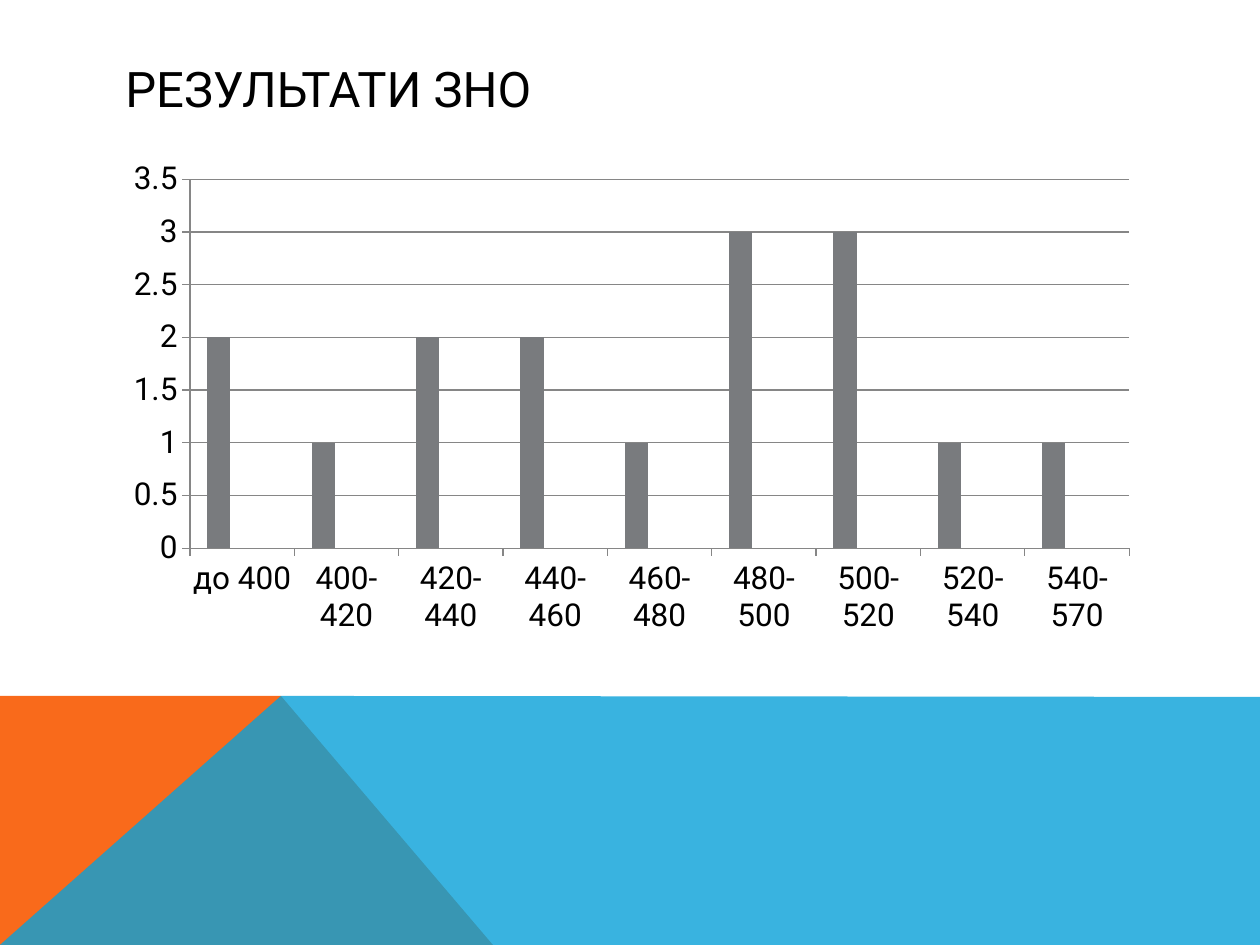
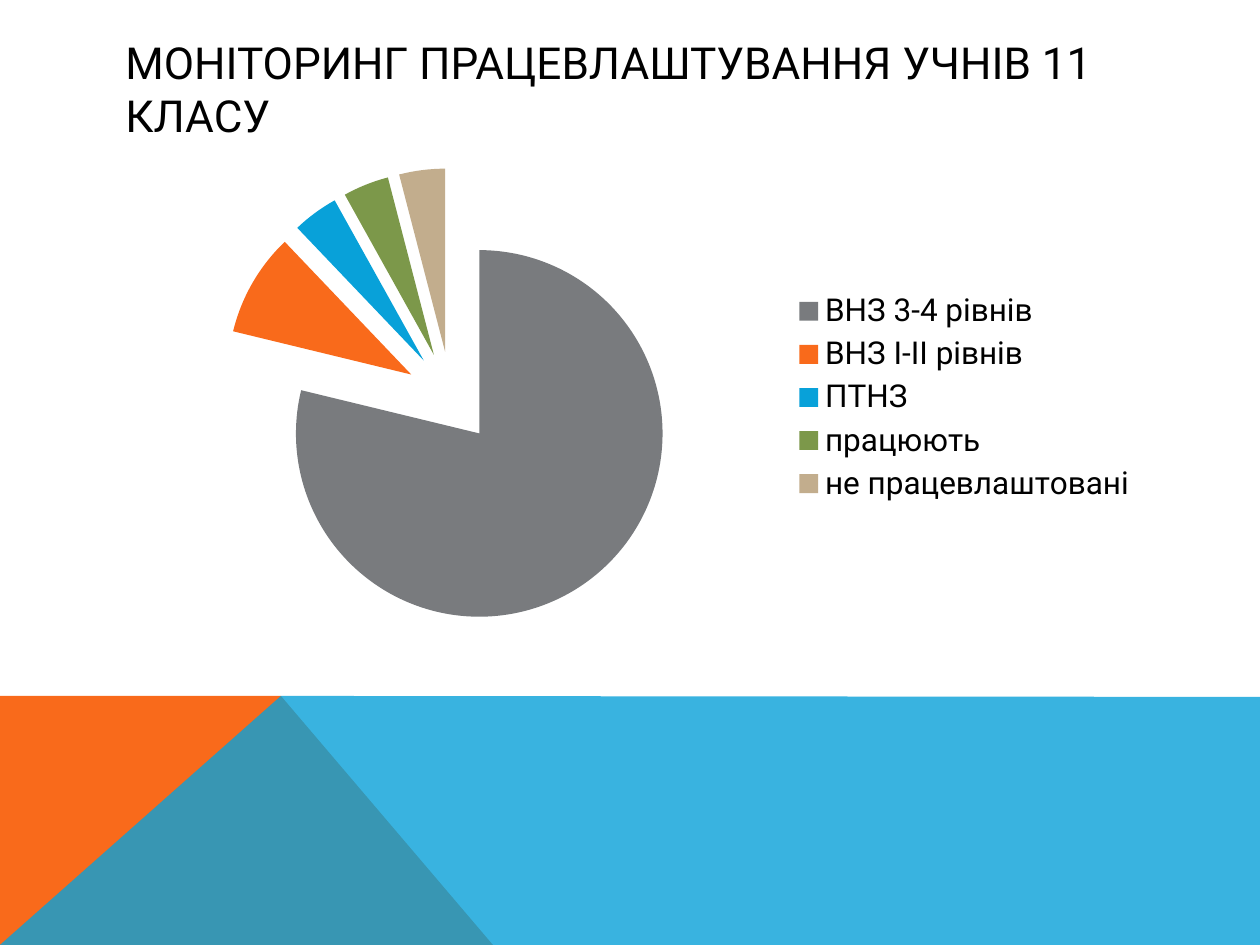
from lxml.etree import SubElement
from pptx import Presentation
from pptx.chart.data import CategoryChartData
from pptx.dml.color import RGBColor
from pptx.enum.chart import XL_CHART_TYPE, XL_LEGEND_POSITION, XL_TICK_MARK
from pptx.enum.text import MSO_ANCHOR
from pptx.oxml import parse_xml
from pptx.oxml.ns import nsdecls, qn
from pptx.util import Emu, Pt

EMU_PER_PX = 914400 / 126
SLIDE_W, SLIDE_H = 1260, 945
TITLE_BOX = (113, 50, 1036, 76)
CHART_BOX = (113, 151, 1037, 493)
BAND_TOP, PEAK_X, ORANGE_END = 696, 281, 493

FONT = "Roboto"
BLACK = RGBColor(0x00, 0x00, 0x00)
GRAY = RGBColor(0x79, 0x7B, 0x7E)
ORANGE = RGBColor(0xF9, 0x6A, 0x1B)
BLUE = RGBColor(0x08, 0xA1, 0xD9)
GREEN = RGBColor(0x7C, 0x98, 0x4A)
SAND = RGBColor(0xC2, 0xAD, 0x8D)
AXIS_GRAY = RGBColor(0x86, 0x86, 0x86)
ACCENTS = [GRAY, ORANGE, BLUE, GREEN, SAND]

SCORES_TITLE = ("РЕЗУЛЬТАТИ ЗНО", 28)
SCORES = [
    ("до 400 ", 2), ("400-420", 1), ("420-440", 2),
    ("440-460", 2), ("460-480", 1), ("480-500", 3),
    ("500-520", 3), ("520-540", 1), ("540-570", 1),
]
EMPTY_SERIES = ["Series 2", "Series 3"]

PLACEMENT_TITLE = ("МОНІТОРИНГ ПРАЦЕВЛАШТУВАННЯ УЧНІВ 11 КЛАСУ", 25.2)
PLACEMENT = [
    ("ВНЗ 3-4 рівнів", 78),
    ("ВНЗ І-ІІ рівнів", 9),
    ("ПТНЗ", 4),
    ("працюють", 4),
    ("не працевлаштовані", 4),
]
EXPLOSION = 25

BANDS = [
    ([(0, SLIDE_H), (0, BAND_TOP), (PEAK_X, BAND_TOP), (ORANGE_END, SLIDE_H)], ORANGE, 100),
    ([(0, SLIDE_H), (PEAK_X, BAND_TOP), (SLIDE_W, BAND_TOP + 1), (SLIDE_W, SLIDE_H)], BLUE, 80),
]


def px(length):
    return Emu(round(length * EMU_PER_PX))


def add_band(slide, corners, color, opacity):
    builder = slide.shapes.build_freeform(*corners[0], scale=EMU_PER_PX)
    builder.add_line_segments(corners[1:], close=True)
    band = builder.convert_to_shape()
    band.shadow.inherit = False
    band.line.fill.background()
    band.fill.solid()
    band.fill.fore_color.rgb = color
    if opacity < 100:
        tint = band.fill._xPr.find(".//" + qn("a:srgbClr"))
        SubElement(tint, qn("a:alpha"), val=str(opacity * 1000))


def add_titled_slide(deck, title, size):
    slide = deck.slides.add_slide(deck.slide_layouts[6])
    for band in BANDS:
        add_band(slide, *band)
    frame = slide.shapes.add_textbox(*map(px, TITLE_BOX)).text_frame
    frame.word_wrap = True
    frame.vertical_anchor = MSO_ANCHOR.MIDDLE
    run = frame.paragraphs[0].add_run()
    run.text = title
    run.font.size = Pt(size)
    run.font.name = FONT
    run.font.color.rgb = BLACK
    return slide


def add_chart(slide, kind, rows, empty_series=()):
    labels, values = zip(*rows)
    chart_data = CategoryChartData()
    chart_data.categories = labels
    chart_data.add_series("Series 1", values)
    for name in empty_series:
        chart_data.add_series(name, [None] * len(labels))
    chart = slide.shapes.add_chart(kind, *map(px, CHART_BOX), chart_data).chart
    chart.has_title = False
    chart.has_legend = False
    chart.font.size = Pt(18)
    chart.font.name = FONT
    chart.font.color.rgb = BLACK
    return chart


def style_line(line):
    line.color.rgb = AXIS_GRAY
    line.width = Pt(0.75)


def add_scores(deck):
    slide = add_titled_slide(deck, *SCORES_TITLE)
    chart = add_chart(slide, XL_CHART_TYPE.COLUMN_CLUSTERED, SCORES, EMPTY_SERIES)
    plot = chart.plots[0]
    plot.gap_width = 150
    plot.vary_by_categories = False
    for series, color in zip(plot.series, ACCENTS):
        series.format.fill.solid()
        series.format.fill.fore_color.rgb = color
    for axis in (chart.category_axis, chart.value_axis):
        axis.major_tick_mark = XL_TICK_MARK.OUTSIDE
        axis.minor_tick_mark = XL_TICK_MARK.NONE
        style_line(axis.format.line)
    chart.value_axis.has_major_gridlines = True
    style_line(chart.value_axis.major_gridlines.format.line)


def add_placement(deck):
    slide = add_titled_slide(deck, *PLACEMENT_TITLE)
    chart = add_chart(slide, XL_CHART_TYPE.PIE, PLACEMENT)
    chart.has_legend = True
    chart.legend.position = XL_LEGEND_POSITION.RIGHT
    chart.legend.include_in_layout = False
    plot = chart.plots[0]
    plot.vary_by_categories = True
    series = plot.series[0]
    for index, color in enumerate(ACCENTS):
        fill = series.points[index].format.fill
        fill.solid()
        fill.fore_color.rgb = color
    explosion = parse_xml(f'<c:explosion {nsdecls("c")} val="{EXPLOSION}"/>')
    series._element.find(qn("c:dPt")).addprevious(explosion)


def main():
    deck = Presentation()
    deck.slide_width, deck.slide_height = px(SLIDE_W), px(SLIDE_H)
    add_scores(deck)
    add_placement(deck)
    deck.save("out.pptx")


if __name__ == "__main__":
    main()
